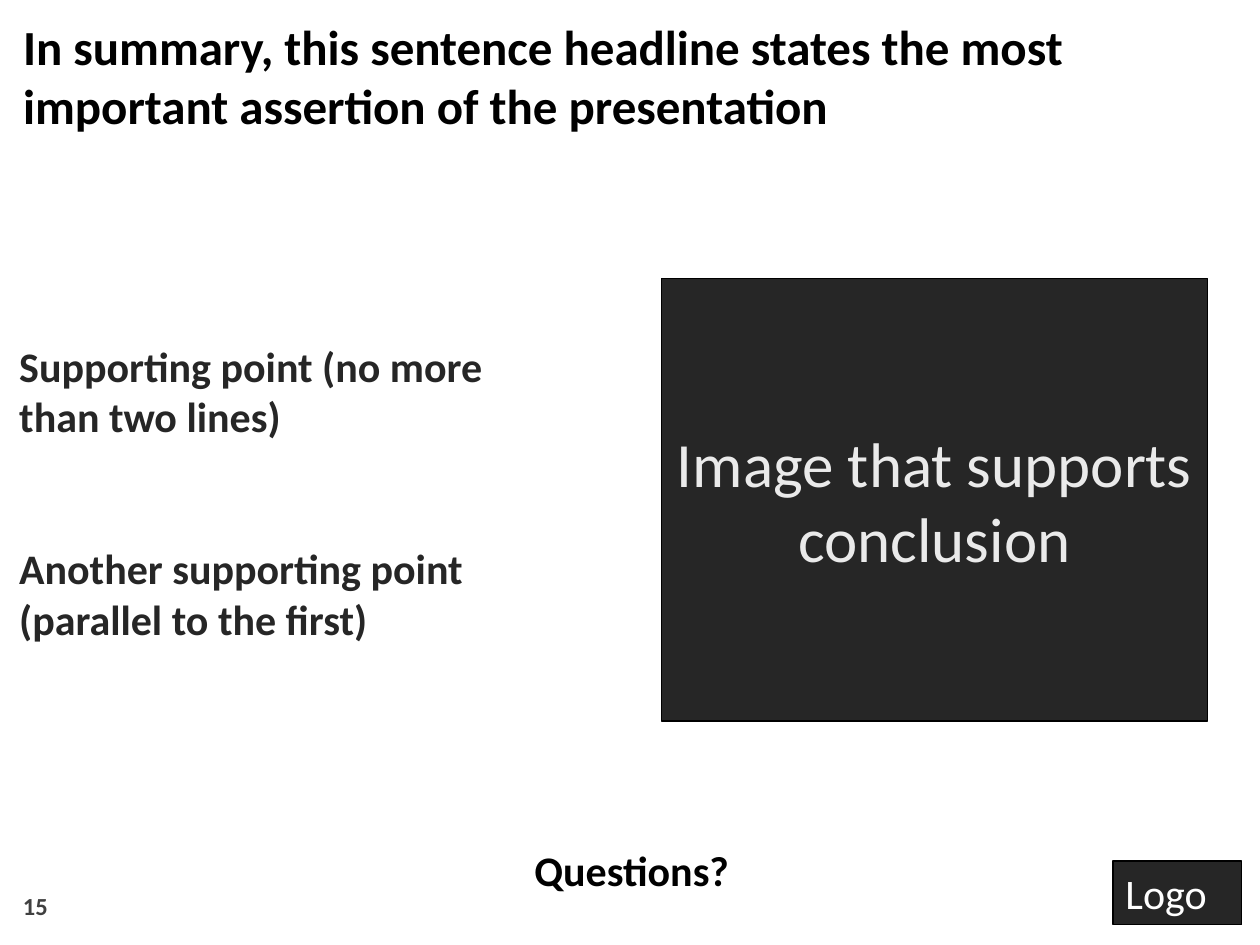
import dataclasses

import pptx
import pptx.dml.color
import pptx.enum.shapes
import pptx.enum.text
import pptx.oxml.ns
import pptx.shapes.autoshape
import pptx.slide
import pptx.util

Pt = pptx.util.Pt
ALIGN = pptx.enum.text.PP_ALIGN
ANCHOR = pptx.enum.text.MSO_ANCHOR

FONT = "Calibri"
COLORS = {
    "black": "000000",
    "panel": "262626",
    "number": "404040",
    "pale": "EAEAEA",
    "white": "FFFFFF",
}
LEFT = 6  # shared left edge of headline, points and page number


@dataclasses.dataclass(frozen=True)
class Area:
    left: float
    top: float
    width: float
    height: float

    def lengths(self) -> tuple:
        return tuple(Pt(value) for value in dataclasses.astuple(self))


@dataclasses.dataclass(frozen=True)
class Panel:
    area: Area
    text: str
    size: float
    color: str
    align: ALIGN
    anchor: ANCHOR


PANELS = [
    Panel(Area(378, 159, 312, 253), "Image that supports conclusion",
          36, "pale", ALIGN.CENTER, ANCHOR.MIDDLE),
    Panel(Area(636, 492, 73.5, 36.5), "Logo",
          24, "white", ALIGN.LEFT, ANCHOR.TOP),
]


def rgb(name: str) -> pptx.dml.color.RGBColor:
    return pptx.dml.color.RGBColor.from_string(COLORS[name])


def write_text(box: pptx.shapes.autoshape.Shape, *texts: str, size: float,
               color: str, bold: bool = True, align: ALIGN = ALIGN.LEFT,
               anchor: ANCHOR = ANCHOR.TOP, gap: float = 0,
               inset: tuple = (7.2, 3.6)) -> None:
    """Fill the box with one paragraph per text, gap points apart."""
    frame = box.text_frame
    frame.word_wrap = True
    frame.auto_size = pptx.enum.text.MSO_AUTO_SIZE.NONE
    frame.vertical_anchor = anchor
    frame.margin_left = frame.margin_right = Pt(inset[0])
    frame.margin_top = frame.margin_bottom = Pt(inset[1])
    for index, text in enumerate(texts):
        para = frame.add_paragraph() if index else frame.paragraphs[0]
        para.alignment = align
        para.space_before = Pt(gap if index else 0)
        span = para.add_run()
        span.text = text
        span.font.name = FONT
        span.font.size = Pt(size)
        span.font.bold = bold
        span.font.color.rgb = rgb(color)


def place(box: pptx.shapes.autoshape.Shape, area: Area) -> None:
    box.left, box.top, box.width, box.height = area.lengths()


def remove_bullets(box: pptx.shapes.autoshape.Shape) -> None:
    for para in box.text_frame.paragraphs:
        properties = para._p.get_or_add_pPr()
        properties.set("marL", "0")
        properties.set("indent", "0")
        properties.append(pptx.oxml.parse_xml(
            f"<a:buNone {pptx.oxml.ns.nsdecls('a')}/>"))


def draw_panel(page: pptx.slide.Slide, panel: Panel) -> None:
    box = page.shapes.add_shape(
        pptx.enum.shapes.MSO_SHAPE.RECTANGLE, *panel.area.lengths())
    box.shadow.inherit = False
    box.fill.solid()
    box.fill.fore_color.rgb = rgb("panel")
    box.line.color.rgb = rgb("black")
    box.line.width = Pt(0.75)
    write_text(box, panel.text, size=panel.size, color=panel.color,
               bold=False, align=panel.align, anchor=panel.anchor)


def main() -> None:
    deck = pptx.Presentation()
    deck.slide_width, deck.slide_height = Pt(720), Pt(540)
    page = deck.slides.add_slide(deck.slide_layouts[1])

    headline = page.shapes.title
    place(headline, Area(LEFT, 6, 708, 74))
    write_text(headline, "In summary, this sentence headline states the most "
               "important assertion of the presentation",
               size=28, color="black")

    points = page.placeholders[1]
    place(points, Area(LEFT, 192, 300, 178.5))
    write_text(points, "Supporting point (no more than two lines)",
               "Another supporting point (parallel to the first)",
               size=24, color="panel", gap=58, inset=(5, 2.5))
    remove_bullets(points)

    for panel in PANELS:
        draw_panel(page, panel)

    questions = page.shapes.add_textbox(*Area(297, 479, 128, 36.5).lengths())
    write_text(questions, "Questions?", size=24, color="black",
               align=ALIGN.CENTER)

    number = page.shapes.add_textbox(*Area(LEFT, 500.5, 168, 29).lengths())
    write_text(number, "15", size=14, color="number", anchor=ANCHOR.BOTTOM)

    deck.save("out.pptx")


if __name__ == "__main__":
    main()
